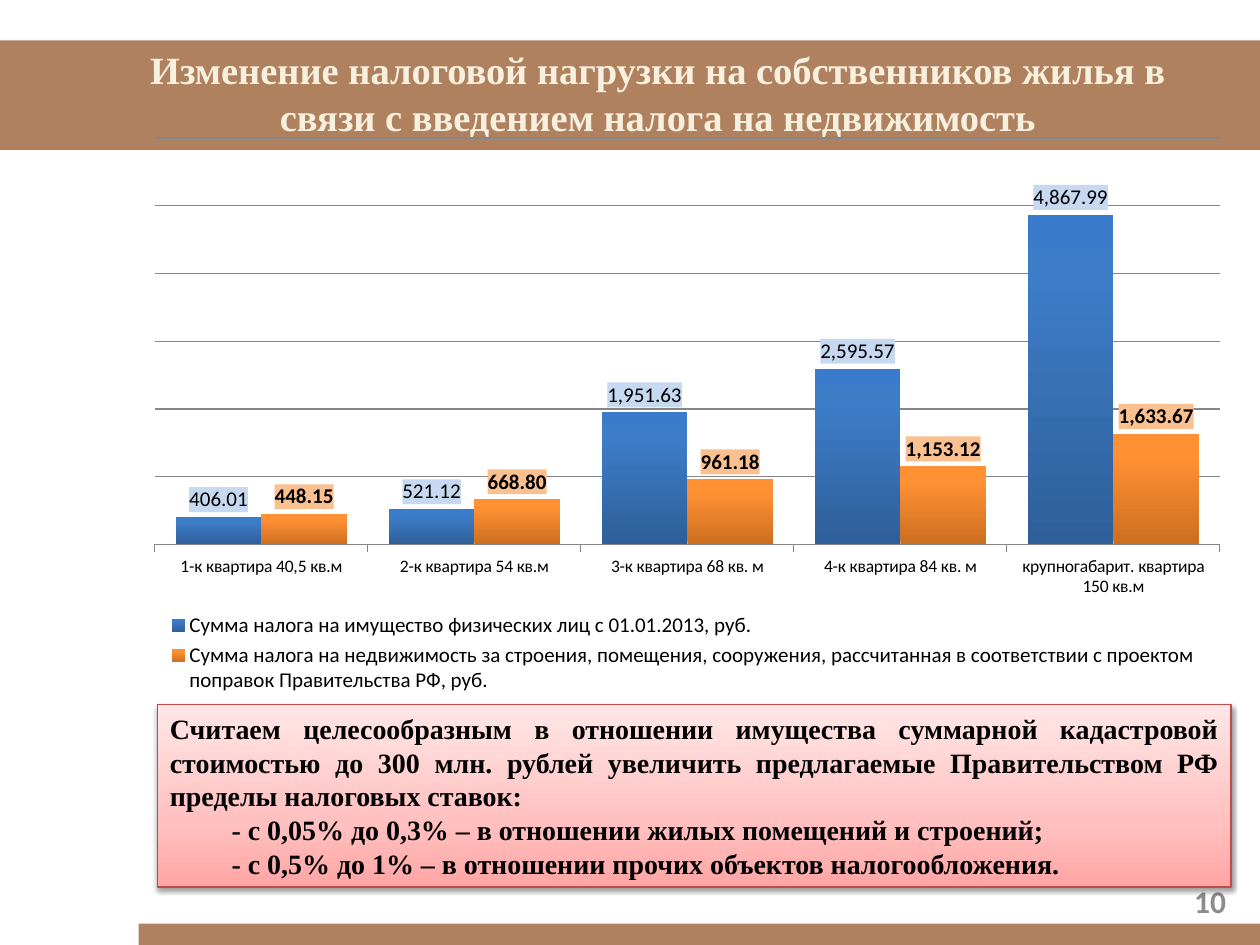
from lxml.etree import SubElement
from pptx import Presentation
from pptx.chart.data import CategoryChartData
from pptx.dml.color import RGBColor
from pptx.enum.chart import XL_CHART_TYPE, XL_LABEL_POSITION, XL_LEGEND_POSITION, XL_TICK_MARK
from pptx.enum.shapes import MSO_SHAPE
from pptx.enum.text import MSO_ANCHOR, MSO_AUTO_SIZE, PP_ALIGN
from pptx.oxml import parse_xml
from pptx.oxml.ns import nsdecls, qn
from pptx.util import Inches, Pt

BROWN = RGBColor(0xAF, 0x81, 0x5F)
CREAM = RGBColor(0xF7, 0xF0, 0xDE)
BLACK = RGBColor(0x00, 0x00, 0x00)
GRAY = RGBColor(0x8C, 0x8C, 0x8C)
GRID_GRAY = RGBColor(0x86, 0x86, 0x86)
RED = RGBColor(0xBF, 0x4C, 0x48)
LABEL_BLUE = RGBColor(0xC6, 0xD9, 0xF1)
LABEL_ORANGE = RGBColor(0xFA, 0xC0, 0x90)
BLUE_STOPS = [(0, RGBColor(0x2F, 0x5F, 0x99)), (80, RGBColor(0x3D, 0x7C, 0xC7)),
              (100, RGBColor(0x3A, 0x7C, 0xCB))]
ORANGE_STOPS = [(0, RGBColor(0xCC, 0x6E, 0x20)), (80, RGBColor(0xFF, 0x90, 0x34)),
                (100, RGBColor(0xFF, 0x91, 0x36))]
PINK_STOPS = [(0, RGBColor(0xFF, 0xA6, 0xA5)), (35, RGBColor(0xFF, 0xC0, 0xBF)),
              (100, RGBColor(0xFF, 0xE7, 0xE7))]
SERIF, SANS = "Times New Roman", "Calibri"
NUMBER_FORMAT = "#,##0.00"

TITLE = "Изменение налоговой нагрузки на собственников жилья в связи с введением налога на недвижимость"
APARTMENTS = ["1-к квартира 40,5 кв.м", "2-к квартира 54 кв.м", "3-к квартира 68 кв. м",
              "4-к квартира 84 кв. м", "крупногабарит. квартира 150 кв.м"]
# name, values, bar gradient, label background, bold labels
TAXES = [
    ("Сумма налога на имущество физических лиц с 01.01.2013, руб.",
     (406.01, 521.12, 1951.63, 2595.57, 4867.99), BLUE_STOPS, LABEL_BLUE, False),
    ("Сумма налога на недвижимость за строения, помещения, сооружения, рассчитанная "
     "в соответствии с проектом поправок Правительства РФ, руб.",
     (448.15, 668.80, 961.18, 1153.12, 1633.67), ORANGE_STOPS, LABEL_ORANGE, True),
]
PROPOSAL = "Считаем целесообразным в отношении имущества суммарной кадастровой стоимостью до 300 млн. рублей увеличить предлагаемые Правительством РФ пределы налоговых ставок:"
RATES = ["-\u00a0с 0,05% до 0,3% – в отношении жилых помещений и строений;",
         "-\u00a0с 0,5% до 1% – в отношении прочих объектов налогообложения."]


def inches(box):
    return [Inches(length) for length in box]


def fill_upward(fill, properties, stops):
    """Gradient rising from the bottom edge, with any number of stops."""
    fill.gradient()
    fill.gradient_angle = 90
    stop_list = next(properties.iter(qn("a:gsLst")))
    for old_stop in list(stop_list):
        stop_list.remove(old_stop)
    for percent, color in stops:
        stop = SubElement(stop_list, qn("a:gs"), pos=str(percent * 1000))
        SubElement(stop, qn("a:srgbClr"), val=str(color))


def style_font(font, size, color=BLACK, bold=False, name=SANS):
    font.size, font.bold, font.name = Pt(size), bold, name
    font.color.rgb = color


def add_line(paragraph, text, align, size, color, name):
    paragraph.alignment = align
    run = paragraph.add_run()
    run.text = text
    style_font(run.font, size, color, True, name)


def add_band(slide, box):
    band = slide.shapes.add_shape(MSO_SHAPE.RECTANGLE, *inches(box))
    band.shadow.inherit = False
    band.fill.solid()
    band.fill.fore_color.rgb = BROWN
    band.line.fill.background()


def add_label(slide, box, text, align, size, color, name):
    frame = slide.shapes.add_textbox(*inches(box)).text_frame
    frame.word_wrap = True
    frame.vertical_anchor = MSO_ANCHOR.MIDDLE
    add_line(frame.paragraphs[0], text, align, size, color, name)


def manual_layout(x, y, w, h, inner=False):
    target = '<c:layoutTarget val="inner"/>' if inner else ""
    return parse_xml(
        f'<c:layout {nsdecls("c")}><c:manualLayout>{target}'
        '<c:xMode val="edge"/><c:yMode val="edge"/>'
        f'<c:x val="{x}"/><c:y val="{y}"/><c:w val="{w}"/><c:h val="{h}"/>'
        '</c:manualLayout></c:layout>')


def style_series(series, stops, label_color, bold):
    fill_upward(series.format.fill, series._element, stops)
    series.invert_if_negative = False
    labels = series.data_labels
    labels.show_value = True
    labels.number_format = NUMBER_FORMAT
    labels.number_format_is_linked = False
    labels.position = XL_LABEL_POSITION.OUTSIDE_END
    style_font(labels.font, 12, bold=bold)
    labels._element.find(qn("c:numFmt")).addnext(parse_xml(
        f'<c:spPr {nsdecls("c", "a")}><a:solidFill><a:srgbClr val="{label_color}"/>'
        '</a:solidFill></c:spPr>'))


def add_tax_chart(slide, box):
    data = CategoryChartData(number_format=NUMBER_FORMAT)
    data.categories = APARTMENTS
    for name, values, *_ in TAXES:
        data.add_series(name, values)
    chart = slide.shapes.add_chart(XL_CHART_TYPE.COLUMN_CLUSTERED, *inches(box), data).chart
    chart.has_title = False
    style_font(chart.font, 11)

    plot = chart.plots[0]
    plot.gap_width, plot.overlap = 49, 0
    plot.vary_by_categories = False
    for series, (_, _, stops, label_color, bold) in zip(plot.series, TAXES):
        style_series(series, stops, label_color, bold)

    amounts = chart.value_axis
    amounts.visible = False
    amounts.minimum_scale, amounts.maximum_scale, amounts.major_unit = 0, 6000, 1000
    amounts.has_major_gridlines = True
    amounts.major_gridlines.format.line.color.rgb = GRID_GRAY
    apartments = chart.category_axis
    apartments.major_tick_mark = XL_TICK_MARK.OUTSIDE
    apartments.format.line.color.rgb = GRID_GRAY
    style_font(apartments.tick_labels.font, 10)

    chart.has_legend = True
    chart.legend.position = XL_LEGEND_POSITION.BOTTOM
    chart.legend.include_in_layout = False
    style_font(chart.legend.font, 12)
    chart.legend._element.find(qn("c:legendPos")).addnext(manual_layout(0.02, 0.84, 0.96, 0.16))

    plot_area = chart._chartSpace.chart.plotArea
    for old_layout in plot_area.findall(qn("c:layout")):
        plot_area.remove(old_layout)
    plot_area.insert(0, manual_layout(0.016, 0, 0.975, 0.726, inner=True))


def add_proposal(slide, box):
    panel = slide.shapes.add_shape(MSO_SHAPE.RECTANGLE, *inches(box))
    properties = panel._element.spPr
    fill_upward(panel.fill, properties, PINK_STOPS)
    panel.line.color.rgb = RED
    panel.line.width = Pt(0.75)
    properties.append(parse_xml(
        f'<a:effectLst {nsdecls("a")}><a:outerShdw blurRad="{Pt(3.1)}" dist="{Pt(1.6)}" '
        'dir="5400000" rotWithShape="0"><a:srgbClr val="000000"><a:alpha val="38000"/>'
        '</a:srgbClr></a:outerShdw></a:effectLst>'))
    frame = panel.text_frame
    frame.word_wrap = True
    frame.auto_size = MSO_AUTO_SIZE.SHAPE_TO_FIT_TEXT
    frame.vertical_anchor = MSO_ANCHOR.MIDDLE
    add_line(frame.paragraphs[0], PROPOSAL, PP_ALIGN.JUSTIFY, 16, BLACK, SERIF)
    for rate in RATES:
        paragraph = frame.add_paragraph()
        add_line(paragraph, rate, PP_ALIGN.JUSTIFY, 16, BLACK, SERIF)
        paragraph._p.get_or_add_pPr().set("indent", str(Inches(0.49)))


def main():
    deck = Presentation()
    deck.slide_width, deck.slide_height = Inches(10), Inches(7.5)
    slide = deck.slides.add_slide(deck.slide_layouts[6])
    add_band(slide, (1.1, 7.33, 8.94, 0.2))
    add_band(slide, (0, 0.32, 10.04, 0.87))
    add_label(slide, (0.94, 0.3, 8.56, 0.87), TITLE, PP_ALIGN.CENTER, 22, CREAM, SERIF)
    add_tax_chart(slide, (1.09, 1.09, 8.67, 4.45))
    add_label(slide, (7.5, 6.95, 2.33, 0.4), "10", PP_ALIGN.RIGHT, 18, GRAY, SANS)
    add_proposal(slide, (1.25, 5.59, 8.52, 1.45))
    deck.save("out.pptx")


if __name__ == "__main__":
    main()
